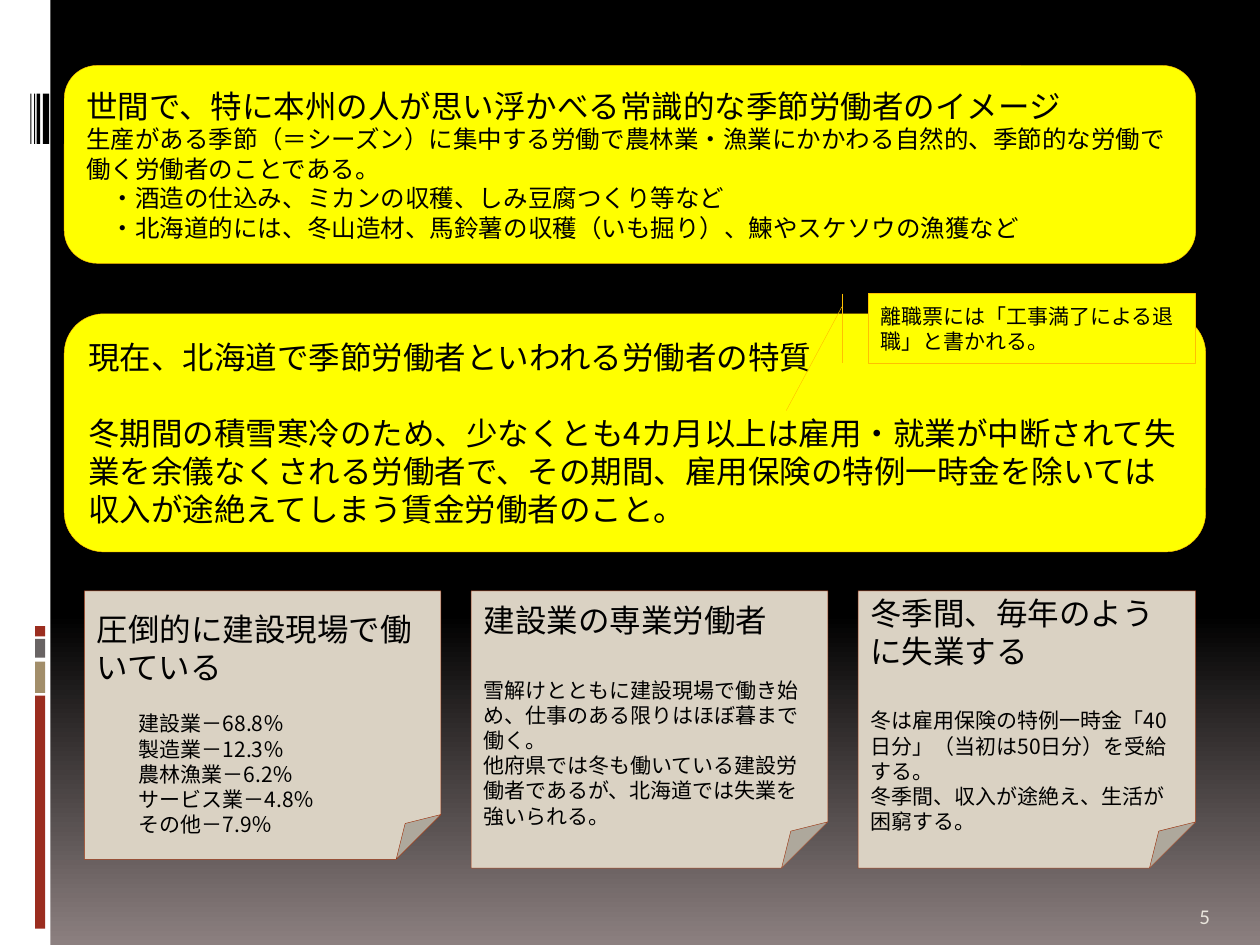
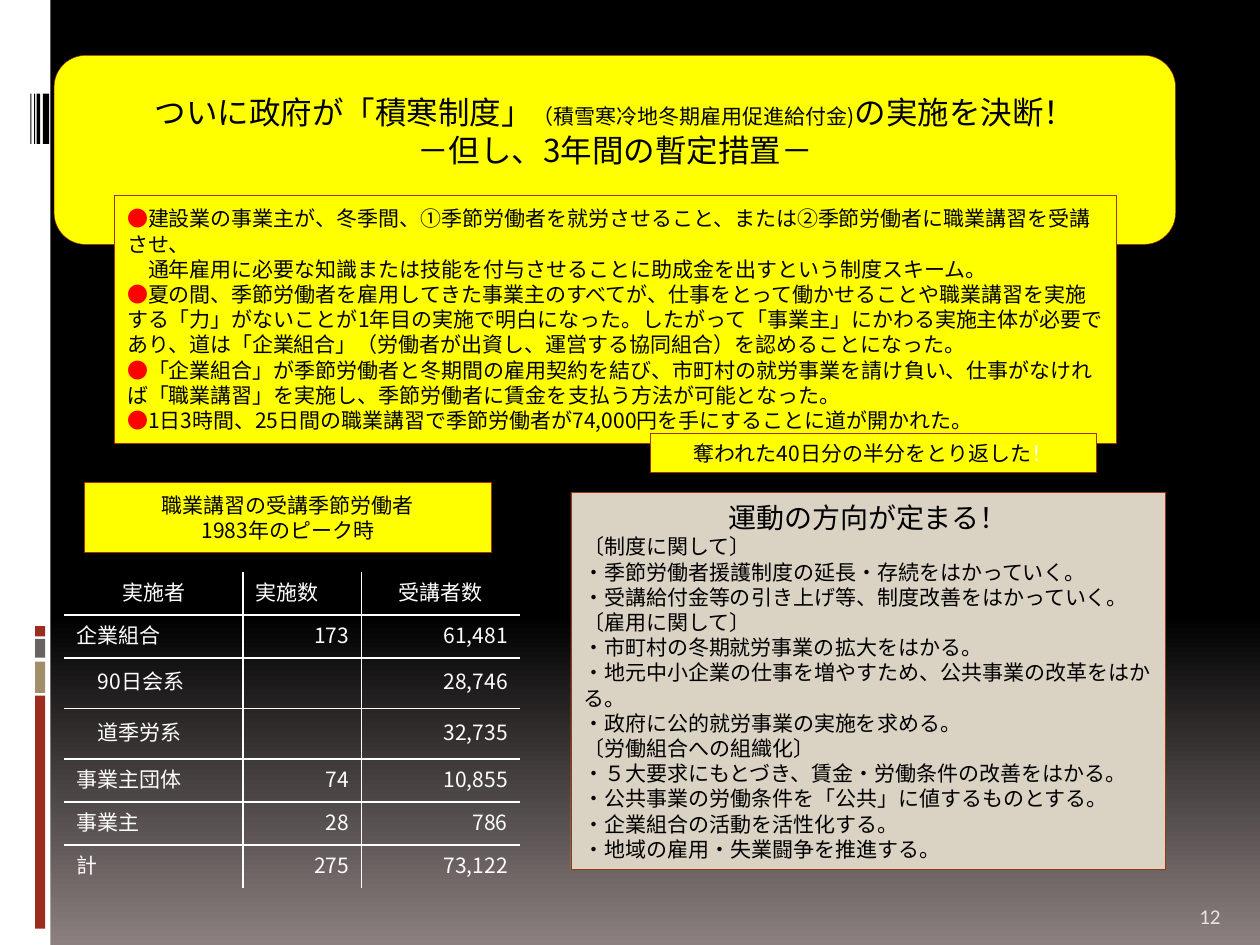
from lxml import etree
from pptx import Presentation
from pptx.dml.color import RGBColor
from pptx.enum.shapes import MSO_SHAPE
from pptx.enum.text import MSO_ANCHOR, PP_ALIGN
from pptx.oxml.ns import qn
from pptx.util import Pt

RECTANGLE = MSO_SHAPE.RECTANGLE
ROUNDED = MSO_SHAPE.ROUNDED_RECTANGLE
FOLDED = MSO_SHAPE.FOLDED_CORNER
CALLOUT = MSO_SHAPE.LINE_CALLOUT_1_BORDER_AND_ACCENT_BAR
TOP, MIDDLE, BOTTOM = MSO_ANCHOR.TOP, MSO_ANCHOR.MIDDLE, MSO_ANCHOR.BOTTOM
LEFT, CENTER, RIGHT = PP_ALIGN.LEFT, PP_ALIGN.CENTER, PP_ALIGN.RIGHT

COLORS = {
    "black": "000000", "white": "FFFFFF", "glow": "8C8080", "brick": "9B2D1F",
    "sand": "A28E6A", "stone": "696464", "yellow": "FFFF00", "amber": "FFC000",
    "rust": "9C3511", "paper": "DAD2C3", "red": "FF0000", "number": "E9E5DC",
}
BODY_FONT, NUMBER_FONT = "Noto Sans CJK JP", "Calibri"
LINE_FACTOR = 1.2

BANDS = [
    (0, 0, 28.8, 540, "white"),
    (20, 397.44, 5.76, 133.2, "brick"),
    (20, 378, 5.76, 18, "sand"),
    (20, 365.04, 5.76, 10.8, "stone"),
    (20, 357.84, 5.76, 5.76, "brick"),
    (24.48, 53.5, 3.6, 28.8, "black"),
    (20.88, 53.5, 2.16, 28.8, "black"),
    (19.44, 53.5, 0.72, 28.8, "black"),
    (17.28, 53.5, 0.72, 28.8, "black"),
]

INDUSTRY_SHARES = ["建設業－68.8％", "製造業－12.3％", "農林漁業－6.2％",
                   "サービス業－4.8％", "その他－7.9％"]
FEATURE_CARDS = [
    {"place": (48.24, 337.68, 203.76, 153.36), "top": 11, "gap": 14.4, "indent": 24,
     "title": "圧倒的に建設現場で働いている", "lines": INDUSTRY_SHARES},
    {"place": (269.28, 337.68, 203.76, 158.4), "top": 6, "gap": 21.6, "indent": 0,
     "title": "建設業の専業労働者",
     "lines": ["雪解けとともに建設現場で働き始め、仕事のある限りはほぼ暮まで働く。",
               "他府県では冬も働いている建設労働者であるが、北海道では失業を強いられる。"]},
    {"place": (490.32, 337.68, 192.96, 158.4), "top": 2, "gap": 21.6, "indent": 0,
     "title": "冬季間、毎年のように失業する",
     "lines": ["冬は雇用保険の特例一時金「40日分」（当初は50日分）を受給する。",
               "冬季間、収入が途絶え、生活が困窮する。"]},
]

SCHEME_POINTS = [
    "建設業の事業主が、冬季間、①季節労働者を就労させること、または②季節労働者に職業講習を受講させ、",
    "夏の間、季節労働者を雇用してきた事業主のすべてが、仕事をとって働かせることや職業講習を実施する「力」が"
    "ないことが1年目の実施で明白になった。したがって「事業主」にかわる実施主体が必要であり、道は「企業組合」"
    "（労働者が出資し、運営する協同組合）を認めることになった。",
    "「企業組合」が季節労働者と冬期間の雇用契約を結び、市町村の就労事業を請け負い、仕事がなければ"
    "「職業講習」を実施し、季節労働者に賃金を支払う方法が可能となった。",
    "1日3時間、25日間の職業講習で季節労働者が74,000円を手にすることに道が開かれた。",
]
SCHEME_NOTE = "通年雇用に必要な知識または技能を付与させることに助成金を出すという制度スキーム。"

MOVEMENT_LINES = [
    "〔制度に関して〕",
    "・季節労働者援護制度の延長・存続をはかっていく。",
    "・受講給付金等の引き上げ等、制度改善をはかっていく。",
    "〔雇用に関して〕",
    "・市町村の冬期就労事業の拡大をはかる。",
    "・地元中小企業の仕事を増やすため、公共事業の改革をはかる。",
    "・政府に公的就労事業の実施を求める。",
    "〔労働組合への組織化〕",
    "・５大要求にもとづき、賃金・労働条件の改善をはかる。",
    "・公共事業の労働条件を「公共」に値するものとする。",
    "・企業組合の活動を活性化する。",
    "・地域の雇用・失業闘争を推進する。",
]

TRAINING_ROWS = [
    ("実施者", "実施数", "受講者数"),
    ("企業組合", "173", "61,481"),
    ("90日会系", "", "28,746"),
    ("道季労系", "", "32,735"),
    ("事業主団体", "74", "10,855"),
    ("事業主", "28", "786"),
    ("計", "275", "73,122"),
]
HEADER_ALIGNS, BODY_ALIGNS = (CENTER, LEFT, CENTER), (LEFT, RIGHT, RIGHT)
SUBGROUPS = ("90日会系", "道季労系")


def color_of(name):
    """Return the colour that a palette name stands for."""
    return RGBColor.from_string(COLORS[name])


def write(frame, text, size=12, color="black", align=LEFT, indent=0, gap=0, font=BODY_FONT):
    """Add one paragraph; text is a string or a list of (string, span format) pairs."""
    para = frame.add_paragraph() if frame.text else frame.paragraphs[0]
    para.alignment = align
    para.line_spacing = Pt(size * LINE_FACTOR)
    para.space_before, para.space_after = Pt(0), Pt(gap)
    para._p.get_or_add_pPr().set("marL", str(Pt(indent)))
    for words, style in [(text, {})] if isinstance(text, str) else text:
        span = para.add_run()
        span.text = words
        span.font.size = Pt(style.get("size", size))
        span.font.color.rgb = color_of(style.get("color", color))
        span.font.name = font
        etree.SubElement(span._r.get_or_add_rPr(), qn("a:ea")).set("typeface", font)


def add_box(page, kind, place, fill, line=None, anchor=MIDDLE):
    """Add a filled preset shape and return it."""
    box = page.shapes.add_shape(kind, *map(Pt, place))
    box.shadow.inherit = False
    box.fill.solid()
    box.fill.fore_color.rgb = color_of(fill)
    if line:
        box.line.color.rgb = color_of(line)
        box.line.width = Pt(0.25)
    else:
        box.line.fill.background()
    box.text_frame.word_wrap = True
    box.text_frame.vertical_anchor = anchor
    return box


def add_page(deck, number):
    """Add a blank page with the shared background, side bands and page number."""
    page = deck.slides.add_slide(deck.slide_layouts[6])
    fill = page.background.fill
    fill.gradient()
    fill.gradient_angle = 270
    for stop, position, color in zip(fill.gradient_stops, (0.65, 1), ("black", "glow")):
        stop.position = position
        stop.color.rgb = color_of(color)
    for *place, color in BANDS:
        add_box(page, RECTANGLE, place, color)
    frame = page.shapes.add_textbox(Pt(678.24), Pt(505.44), Pt(36), Pt(28.8)).text_frame
    frame.word_wrap = True
    frame.vertical_anchor = BOTTOM
    write(frame, str(number), color="number", font=NUMBER_FONT)
    return page


def add_card(page, place, top, gap, indent, title, lines):
    """Add a folded paper card with a title and body lines."""
    frame = add_box(page, FOLDED, place, "paper", "rust", TOP).text_frame
    frame.margin_top, frame.margin_bottom = Pt(top), Pt(0)
    write(frame, title, size=18, gap=gap)
    for line in lines:
        write(frame, line, indent=indent)


def set_border(cell, side, visible):
    """Draw or clear one side of a table cell."""
    border = etree.SubElement(cell._tc.get_or_add_tcPr(), qn(f"a:ln{side}"), w=str(Pt(1)))
    if visible:
        fill = etree.SubElement(border, qn("a:solidFill"))
        etree.SubElement(fill, qn("a:srgbClr")).set("val", COLORS["white"])
    else:
        etree.SubElement(border, qn("a:noFill"))


def add_training_table(page):
    """Add the attendance table, ruled only between its cells."""
    widths, height = (102.24, 67.68, 90.72), 24.6
    last_row, last_column = len(TRAINING_ROWS) - 1, len(widths) - 1
    table = page.shapes.add_table(last_row + 1, last_column + 1, Pt(36.72), Pt(326.88),
                                  Pt(sum(widths)), Pt(height * (last_row + 1))).table
    table.first_row = table.horz_banding = False
    for column, width in zip(table.columns, widths):
        column.width = Pt(width)
    for r, values in enumerate(TRAINING_ROWS):
        table.rows[r].height = Pt(height)
        for c, value in enumerate(values):
            cell = table.cell(r, c)
            sides = {"L": c > 0, "R": c < last_column, "T": r > 0, "B": r < last_row}
            for side, visible in sides.items():
                set_border(cell, side, visible)
            cell.fill.background()
            cell.vertical_anchor = MIDDLE
            aligns = BODY_ALIGNS if r else HEADER_ALIGNS
            write(cell.text_frame, value, color="white", align=aligns[c],
                  indent=12 if value in SUBGROUPS else 0)


def build_worker_page(deck):
    """Build the page on what a seasonal worker is."""
    page = add_page(deck, 5)
    image = add_box(page, ROUNDED, (36.72, 37.44, 646.56, 113.04), "yellow", "amber").text_frame
    write(image, "世間で、特に本州の人が思い浮かべる常識的な季節労働者のイメージ", size=18)
    write(image, "生産がある季節（＝シーズン）に集中する労働で農林業・漁業にかかわる自然的、"
                 "季節的な労働で働く労働者のことである。", size=14)
    for example in ("・酒造の仕込み、ミカンの収穫、しみ豆腐つくり等など",
                    "・北海道的には、冬山造材、馬鈴薯の収穫（いも掘り）、鰊やスケソウの漁獲など"):
        write(image, example, size=14, indent=14)

    traits = add_box(page, ROUNDED, (36.72, 179.28, 652.32, 136.08), "yellow", "amber").text_frame
    write(traits, "現在、北海道で季節労働者といわれる労働者の特質", size=18, gap=21.6)
    write(traits, "冬期間の積雪寒冷のため、少なくとも4カ月以上は雇用・就業が中断されて失業を余儀なくされる"
                  "労働者で、その期間、雇用保険の特例一時金を除いては収入が途絶えてしまう賃金労働者のこと。",
          size=18)

    callout = add_box(page, CALLOUT, (496.08, 167.76, 187.2, 39.6), "yellow", "amber")
    for index, value in enumerate((0.19, -0.08, 1.69, -0.25)):
        callout.adjustments[index] = value
    write(callout.text_frame, "離職票には「工事満了による退職」と書かれる。")
    for card in FEATURE_CARDS:
        add_card(page, **card)


def build_scheme_page(deck):
    """Build the page on the winter employment scheme."""
    page = add_page(deck, 12)
    add_training_table(page)
    peak = add_box(page, RECTANGLE, (48.24, 275.76, 232.56, 39.6), "yellow", "rust").text_frame
    for line in ("職業講習の受講季節労働者", "1983年のピーク時"):
        write(peak, line, align=CENTER)

    title = add_box(page, ROUNDED, (30.96, 31.68, 640.8, 108), "yellow", "rust").text_frame
    title.margin_bottom = Pt(25.2)
    write(title, [("ついに政府が「積寒制度」", {}),
                  ("（積雪寒冷地冬期雇用促進給付金)", {"size": 12}),
                  ("の実施を決断！", {})], size=18, align=CENTER)
    write(title, "－但し、3年間の暫定措置－", size=18, align=CENTER)

    scheme = add_box(page, RECTANGLE, (65.52, 111.6, 572.4, 141.84), "yellow", "rust").text_frame
    for point in SCHEME_POINTS:
        write(scheme, [("●", {"color": "red"}), (point, {})])
        if point == SCHEME_POINTS[0]:
            write(scheme, SCHEME_NOTE, indent=12)

    movement = add_box(page, RECTANGLE, (326.16, 281.52, 339.84, 215.28), "paper", "rust").text_frame
    write(movement, "運動の方向が定まる！", size=16, align=CENTER)
    for line in MOVEMENT_LINES:
        write(movement, line)

    result = add_box(page, RECTANGLE, (371.52, 247.68, 254.88, 22.32), "yellow", "rust").text_frame
    write(result, [("奪われた40日分の半分をとり返した", {}), ("！", {"color": "white"})], align=CENTER)


def main():
    """Build the deck and save it."""
    deck = Presentation()
    deck.slide_width, deck.slide_height = Pt(720), Pt(540)
    build_worker_page(deck)
    build_scheme_page(deck)
    deck.save("out.pptx")


if __name__ == "__main__":
    main()
